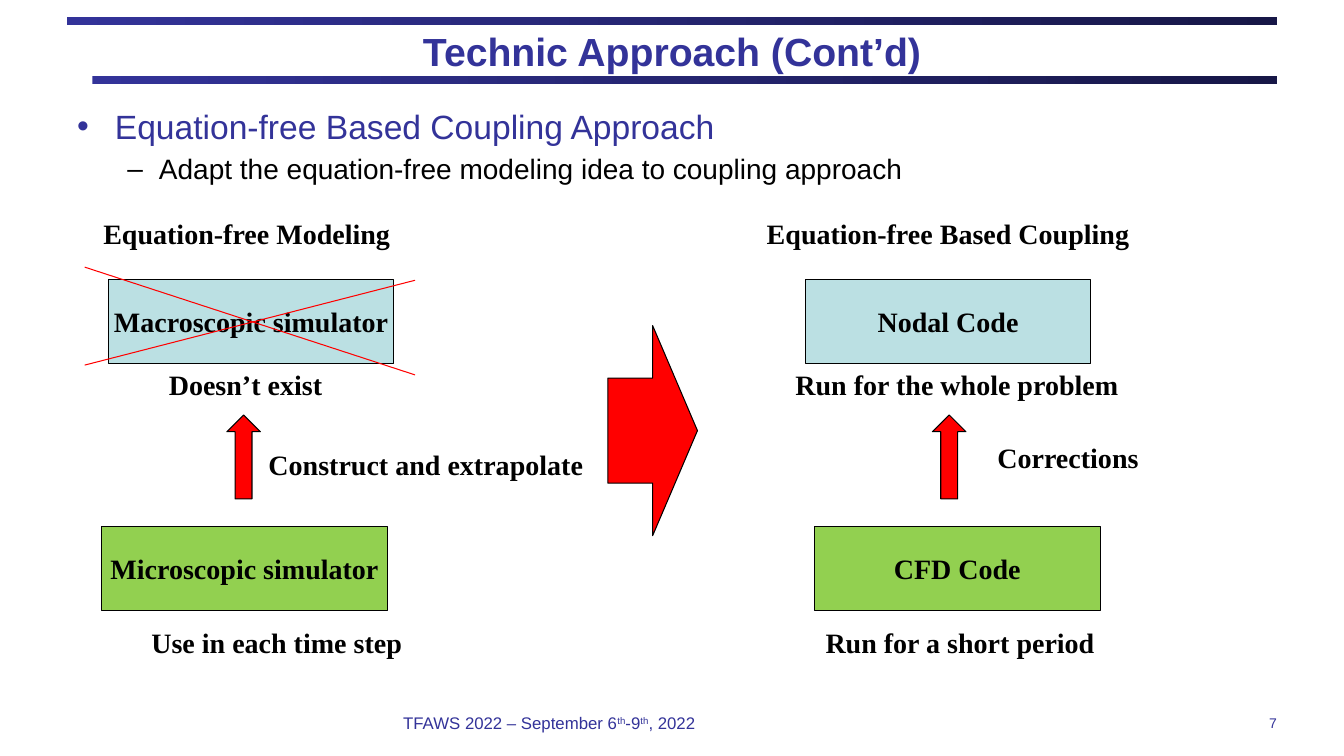
from lxml import etree
from pptx import Presentation
from pptx.dml.color import RGBColor
from pptx.enum.shapes import MSO_CONNECTOR, MSO_SHAPE
from pptx.enum.text import MSO_ANCHOR, MSO_AUTO_SIZE, PP_ALIGN
from pptx.oxml.ns import qn
from pptx.util import Pt

RECT, UP, RIGHT = MSO_SHAPE.RECTANGLE, MSO_SHAPE.UP_ARROW, MSO_SHAPE.RIGHT_ARROW
STRAIGHT = MSO_CONNECTOR.STRAIGHT
MIDDLE, TOP = MSO_ANCHOR.MIDDLE, MSO_ANCHOR.TOP
GROW = MSO_AUTO_SIZE.SHAPE_TO_FIT_TEXT
AL_LEFT, AL_CENTER, AL_RIGHT = PP_ALIGN.LEFT, PP_ALIGN.CENTER, PP_ALIGN.RIGHT

COLORS = {"navy": "333399", "dark": "171747", "black": "000000",
          "red": "FF0000", "blue": "BBE0E3", "green": "92D050"}
SANS, SERIF = "Arial", "Times New Roman"
BOX_W, BOX_H, LABEL_H = 204, 60, 31.7


def rgb(name):
    return RGBColor.from_string(COLORS[name])


def add_run(p, text, size, color="navy", font=SANS, bold=False):
    r = p.add_run()
    r.text = text
    r.font.size, r.font.name, r.font.bold = Pt(size), font, bold
    r.font.color.rgb = rgb(color)
    return r


def add_shape(slide, kind, box, fill):
    sp = slide.shapes.add_shape(kind, *map(Pt, box))
    sp.shadow.inherit = False
    sp.fill.solid()
    sp.fill.fore_color.rgb = rgb(fill)
    sp.line.color.rgb = rgb("black")
    sp.line.width = Pt(0.75)
    return sp


def write_label(sp, text):
    tf = sp.text_frame
    tf.word_wrap = False
    tf.vertical_anchor = MIDDLE
    p = tf.paragraphs[0]
    p.alignment = AL_CENTER
    add_run(p, text, 20, "black", SERIF, True)


def add_label(slide, center, top, width, text):
    sp = slide.shapes.add_textbox(Pt(center - width / 2), Pt(top), Pt(width), Pt(LABEL_H))
    write_label(sp, text)
    sp.text_frame.vertical_anchor = TOP
    sp.text_frame.auto_size = GROW


def add_line(slide, start, end):
    line = slide.shapes.add_connector(STRAIGHT, *map(Pt, start + end))
    line.line.color.rgb = rgb("red")
    line.line.width = Pt(0.75)
    etree.SubElement(line._element.spPr, qn("a:effectLst"))


def add_header(slide, box, text):
    left, top, width, height = box
    for indent, y in ((18, top + height - 6), (0, top)):
        bar = add_shape(slide, RECT, (left + indent, y, width - indent, 6), "navy")
        bar.line.fill.background()
        bar.fill.gradient()
        bar.fill.gradient_angle = 0
        for stop, color in zip(bar.fill.gradient_stops, ("navy", "dark")):
            stop.color.rgb = rgb(color)
    title = slide.shapes.title
    title.left, title.top, title.width, title.height = map(Pt, (left, top + 3, width, 42))
    tf = title.text_frame
    tf.vertical_anchor = MIDDLE
    tf.margin_top = tf.margin_bottom = 0
    p = tf.paragraphs[0]
    p.alignment = AL_CENTER
    add_run(p, text, 28, bold=True)


def add_bullets(slide, box, items):
    tf = slide.shapes.add_textbox(*map(Pt, box)).text_frame
    tf.word_wrap = True
    for i, (text, char, size, color, margin, hang) in enumerate(items):
        p = tf.paragraphs[0] if i == 0 else tf.add_paragraph()
        pPr = p._p.get_or_add_pPr()
        pPr.set("lvl", str(i))
        pPr.set("marL", str(Pt(margin)))
        pPr.set("indent", str(-Pt(hang)))
        etree.SubElement(pPr, qn("a:buFont"), typeface=SANS)
        etree.SubElement(pPr, qn("a:buChar"), char=char)
        if i:
            p.space_before = Pt(size * 0.2)
        add_run(p, text, size, color)


def add_column(slide, box, heading, upper, note, link, lower, footnote):
    left, top, width, height = box
    mid = left + width / 2

    def block(part, y, fill):
        text, dx = part
        sp = add_shape(slide, RECT, (mid + dx - BOX_W / 2, y, BOX_W, BOX_H), fill)
        write_label(sp, text)

    def label(part, y):
        text, dx, w = part
        add_label(slide, mid + dx, y, w, text)

    label(heading, top)
    block(upper, top + 48.5, "blue")
    label(note, top + 108)
    add_shape(slide, UP, (mid - 12, top + 145.2, 24, BOX_H), "red")
    label(link[:3], top + link[3])
    block(lower, top + 225, "green")
    label(footnote, top + height - LABEL_H)


def add_cross(slide, box):
    left, top, width, height = box
    add_line(slide, (left, top + height - 7), (left + width, top + 9.4))
    add_line(slide, (left, top), (left + width, top + height))


def add_footer(slide, box, parts, align, size):
    tf = slide.shapes.add_textbox(*map(Pt, box)).text_frame
    tf.word_wrap = True
    tf.vertical_anchor = MIDDLE
    tf.margin_left = tf.margin_right = tf.margin_top = tf.margin_bottom = 0
    p = tf.paragraphs[0]
    p.alignment = align
    for text, raised in parts:
        r = add_run(p, text, size)
        if raised:
            r._r.get_or_add_rPr().set("baseline", "30000")


def main():
    prs = Presentation()
    prs.slide_width, prs.slide_height = Pt(960), Pt(540)
    slide = prs.slides.add_slide(prs.slide_layouts[5])
    add_header(slide, (48, 12, 864, 48), "Technic Approach (Cont’d)")
    add_bullets(slide, (48, 72, 864, 426), [
        ("Equation-free Based Coupling Approach", "•", 24, "navy", 27, 27),
        ("Adapt the equation-free modeling idea to coupling approach",
         "–", 20, "black", 58.5, 22.5)])
    add_column(slide, (60, 151.2, 228, 324),
               heading=("Equation-free Modeling", 2.3, 221),
               upper=("Macroscopic simulator", 5.4),
               note=("Doesn’t exist", 1.4, 125),
               link=("Construct and extrapolate", 130.2, 241, 165),
               lower=("Microscopic simulator", 0.7),
               footnote=("Use in each time step", 23.7, 195))
    add_cross(slide, (60.5, 190.8, 236, 77))
    add_column(slide, (564, 151.2, 228, 324),
               heading=("Equation-free Based Coupling", -0.8, 276),
               upper=("Nodal Code", -0.8),
               note=("Run for the whole problem", 5.6, 247),
               link=("Corrections", 84.9, 116, 160),
               lower=("CFD Code", 5.8),
               footnote=("Run for a short period", 7.8, 208))
    add_shape(slide, RIGHT, (434.2, 232.6, 64, 150), "red")
    add_footer(slide, (288, 504, 384, 24), [
        ("TFAWS 2022 – September 6", False), ("th", True), ("-9", False),
        ("th", True), (", 2022", False)], AL_LEFT, 12)
    add_footer(slide, (712, 504, 200, 24), [("7", False)], AL_RIGHT, 10)
    prs.save("out.pptx")


if __name__ == "__main__":
    main()
